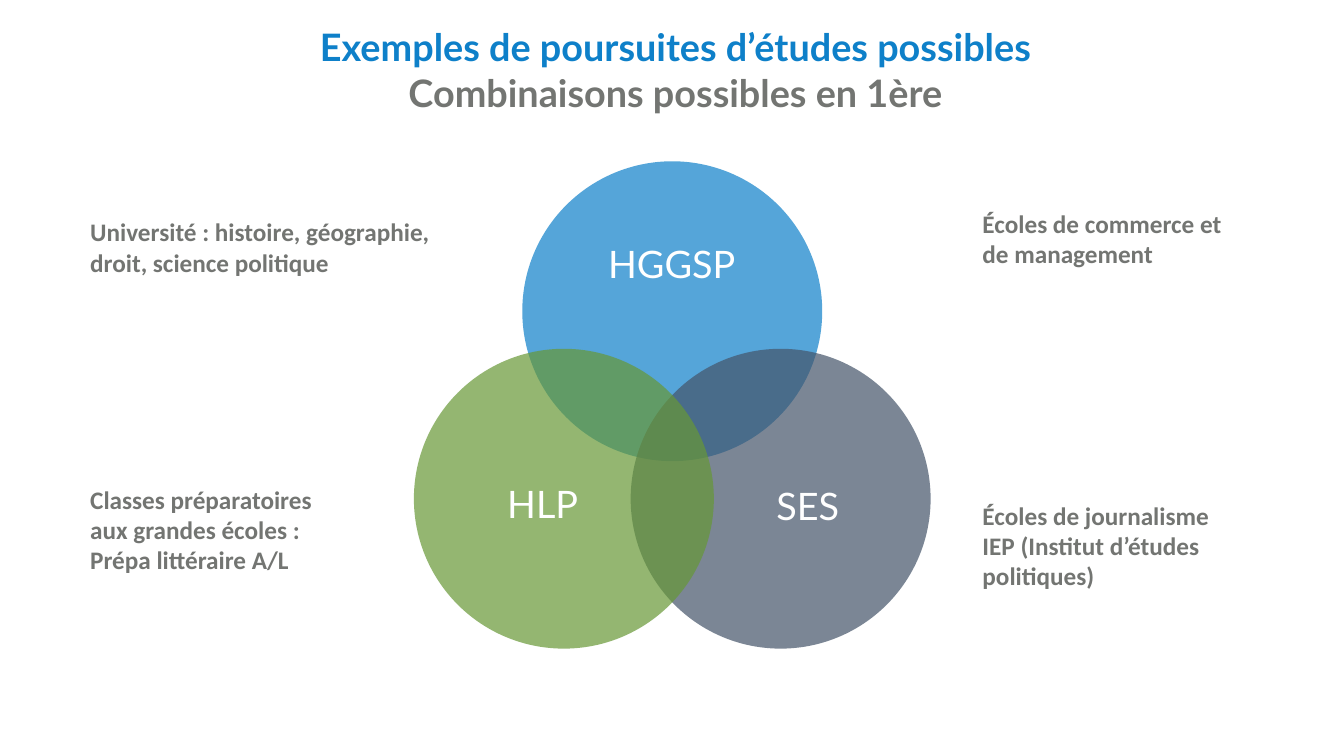
from lxml.etree import SubElement
from pptx import Presentation
from pptx.dml.color import RGBColor
from pptx.enum.shapes import MSO_SHAPE
from pptx.enum.text import MSO_ANCHOR, MSO_AUTO_SIZE, PP_ALIGN
from pptx.oxml.ns import qn
from pptx.util import Inches, Pt

BLUE, SLATE, GREEN = "0E80C9", "445469", "679836"
GREY, WHITE = "737572", "FFFFFF"
CIRCLE_SIZE = 5.95
LABEL_WIDTH, LABEL_HEIGHT = 3.15, 1.01
LEFT_NOTES, RIGHT_NOTES = 1.69, 19.39


def color(hex_string):
    return RGBColor.from_string(hex_string)


class VennSlide:
    heading_font, note_font = "Lato", "Calibri"
    heading_size, note_size = Pt(54), Pt(36)

    def __init__(self, presentation):
        self.slide = presentation.slides.add_slide(presentation.slide_layouts[5])

    def place(self, shape, left, top, width, height):
        shape.left, shape.top = Inches(left), Inches(top)
        shape.width, shape.height = Inches(width), Inches(height)

    def set_text(self, shape, lines, font, size, colors, bold, alignment):
        """Fill a shape with one paragraph per line, each in its own colour."""
        text_frame = shape.text_frame
        text_frame.text = "\n".join(lines)
        text_frame.word_wrap = True
        text_frame.auto_size = MSO_AUTO_SIZE.NONE
        text_frame.vertical_anchor = MSO_ANCHOR.TOP
        for paragraph, hex_string in zip(text_frame.paragraphs, colors):
            paragraph.alignment = alignment
            for run in paragraph.runs:
                run.font.name, run.font.size, run.font.bold = font, size, bold
                run.font.color.rgb = color(hex_string)

    def title(self, lines, colors, *box):
        shape = self.slide.shapes.title
        self.place(shape, *box)
        self.set_text(shape, lines, self.heading_font, self.heading_size,
                      colors, True, PP_ALIGN.CENTER)

    def circle(self, left, top, hex_string, opacity=70):
        size = Inches(CIRCLE_SIZE)
        shape = self.slide.shapes.add_shape(
            MSO_SHAPE.OVAL, Inches(left), Inches(top), size, size)
        shape.shadow.inherit = False
        shape.line.fill.background()
        shape.fill.solid()
        shape.fill.fore_color.rgb = color(hex_string)
        fill_color = shape.element.spPr.find(f"{qn('a:solidFill')}/{qn('a:srgbClr')}")
        SubElement(fill_color, qn("a:alpha"), val=str(opacity * 1000))

    def text_box(self, box):
        return self.slide.shapes.add_textbox(*(Inches(length) for length in box))

    def label(self, text, left, top):
        shape = self.text_box((left, top, LABEL_WIDTH, LABEL_HEIGHT))
        self.set_text(shape, [text], self.heading_font, self.heading_size,
                      [WHITE], False, PP_ALIGN.CENTER)

    def note(self, lines, *box):
        self.set_text(self.text_box(box), lines, self.note_font, self.note_size,
                      [GREY] * len(lines), True, PP_ALIGN.LEFT)


def main():
    presentation = Presentation()
    presentation.slide_width, presentation.slide_height = Inches(26.66), Inches(15)
    venn = VennSlide(presentation)

    venn.title(["Exemples de poursuites d’études possibles",
                "Combinaisons possibles en 1ère"],
               [BLUE, GREY], 5.43, 0.43, 15.94, 1.92)

    for left, top, hex_string in [(10.36, 3.2, BLUE), (12.51, 6.92, SLATE),
                                  (8.21, 6.92, GREEN)]:
        venn.circle(left, top, hex_string)
    for text, left, top in [("HGGSP", 11.75, 4.73), ("HLP", 9.19, 9.49),
                            ("SES", 14.45, 9.52)]:
        venn.label(text, left, top)

    venn.note(["Université : histoire, géographie, droit, science politique"],
              LEFT_NOTES, 4.25, 7.28, 1.31)
    venn.note(["Classes préparatoires aux grandes écoles : Prépa littéraire A/L"],
              LEFT_NOTES, 9.55, 4.95, 1.92)
    venn.note(["Écoles de commerce et de management"],
              RIGHT_NOTES, 4.08, 5.26, 1.31)
    venn.note(["Écoles de journalisme", "IEP (Institut d’études politiques)"],
              RIGHT_NOTES, 9.87, 5.48, 1.92)

    presentation.save("out.pptx")


if __name__ == "__main__":
    main()
